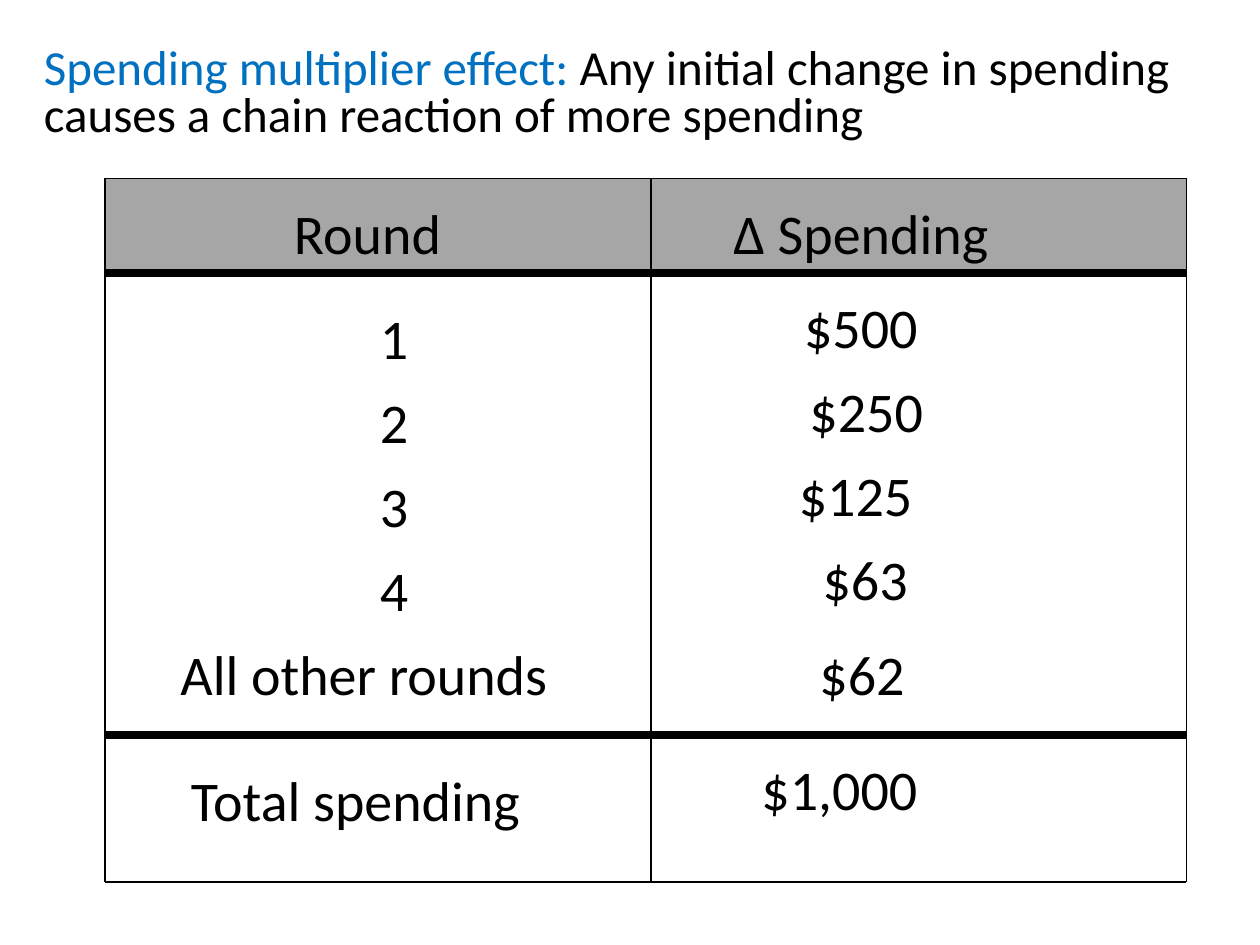
from lxml import etree
from pptx import Presentation
from pptx import util as u
from pptx.dml.color import RGBColor
from pptx.enum import shapes, text
from pptx.oxml.ns import qn

PX = 7620  # EMU; 120 px to the inch
COLORS = {"ink": "000000", "accent": "0070C0", "header": "A6A6A6"}
LEFT, MIDDLE, RIGHT = 100, 620, 1130
TOP, HEADER_BOTTOM, TOTAL_TOP, BOTTOM = 170, 260, 700, 840
ROW_HEIGHT = 71
THIN, THICK = 0.75, 4.5

# text, left, top, width
ROUNDS = [
    ("1", 350, 290, 50),
    ("2", 350, 370, 60),
    ("3", 350, 450, 50),
    ("4", 350, 530, 50),
    ("All other rounds", 160, 610, 570),
    ("Total spending", 170, 730, 460),
]
HEADINGS_AND_AMOUNTS = [
    ("Round", 210, 190, 280),
    ("Δ Spending", 620, 190, 400),
    ("$500", 700, 280, 240),
    ("$250", 720, 360, 210),
    ("$125", 700, 440, 230),
    ("$63", 710, 520, 228),
    ("$1,000", 680, 720, 239),
]


def px(length):
    return u.Emu(length * PX)


def color(name):
    return RGBColor.from_string(COLORS[name])


def add_run(paragraph, content, *, size=32, ink="ink", font="Calibri"):
    run = paragraph.add_run()
    run.text = content
    run.font.name = font
    run.font.size = u.Pt(size)
    run.font.color.rgb = color(ink)


class SlideBuilder:
    def __init__(self, slide):
        self.slide = slide

    def text(self, runs, left, top, width, height=ROW_HEIGHT, *, size=32,
             spacing=0.9, centered=False, indent=0):
        """Add one paragraph made of (text, colour name) runs."""
        shape = self.slide.shapes.add_textbox(*map(px, (left, top, width, height)))
        frame = shape.text_frame
        frame.word_wrap = True
        frame.auto_size = text.MSO_AUTO_SIZE.SHAPE_TO_FIT_TEXT
        frame.margin_left = px(12 + indent)
        paragraph = frame.paragraphs[0]
        paragraph.line_spacing = spacing
        paragraph.alignment = text.PP_ALIGN.CENTER if centered else text.PP_ALIGN.LEFT
        for content, ink in runs:
            add_run(paragraph, content, size=size, ink=ink)

    def rectangle(self, left, top, right, bottom, fill):
        shape = self.slide.shapes.add_shape(
            shapes.MSO_SHAPE.RECTANGLE,
            *map(px, (left, top, right - left, bottom - top)))
        shape.shadow.inherit = False
        shape.fill.solid()
        shape.fill.fore_color.rgb = color(fill)
        shape.line.fill.background()

    def line(self, x1, y1, x2, y2, weight):
        connector = self.slide.shapes.add_connector(
            shapes.MSO_CONNECTOR.STRAIGHT, *map(px, (x1, y1, x2, y2)))
        connector.line.color.rgb = color("ink")
        connector.line.width = u.Pt(weight)
        etree.SubElement(connector._element.spPr, qn("a:effectLst"))


def main():
    presentation = Presentation()
    presentation.slide_width, presentation.slide_height = px(1200), px(900)
    slide = presentation.slides.add_slide(presentation.slide_layouts[6])
    builder = SlideBuilder(slide)

    builder.text(
        [("Spending multiplier effect: ", "accent"),
         ("Any initial change in spending causes a chain reaction of more spending", "ink")],
        30, 40, 1130, 102, size=28, spacing=0.8)

    builder.rectangle(LEFT, TOP, RIGHT, HEADER_BOTTOM, "header")
    for y, weight in ((TOP, THIN), (HEADER_BOTTOM, THICK),
                      (TOTAL_TOP, THICK), (BOTTOM, THIN)):
        builder.line(LEFT, y, RIGHT, y, weight)
    for x in (LEFT, MIDDLE, RIGHT):
        builder.line(x, TOP, x, BOTTOM, THIN)

    for content, *place in ROUNDS:
        builder.text([(content, "ink")], *place)
    for content, *place in HEADINGS_AND_AMOUNTS:
        builder.text([(content, "ink")], *place, centered=True)
    builder.text([("$62", "ink")], 700, 610, 218, centered=True, indent=24)

    presentation.save("out.pptx")


if __name__ == "__main__":
    main()
